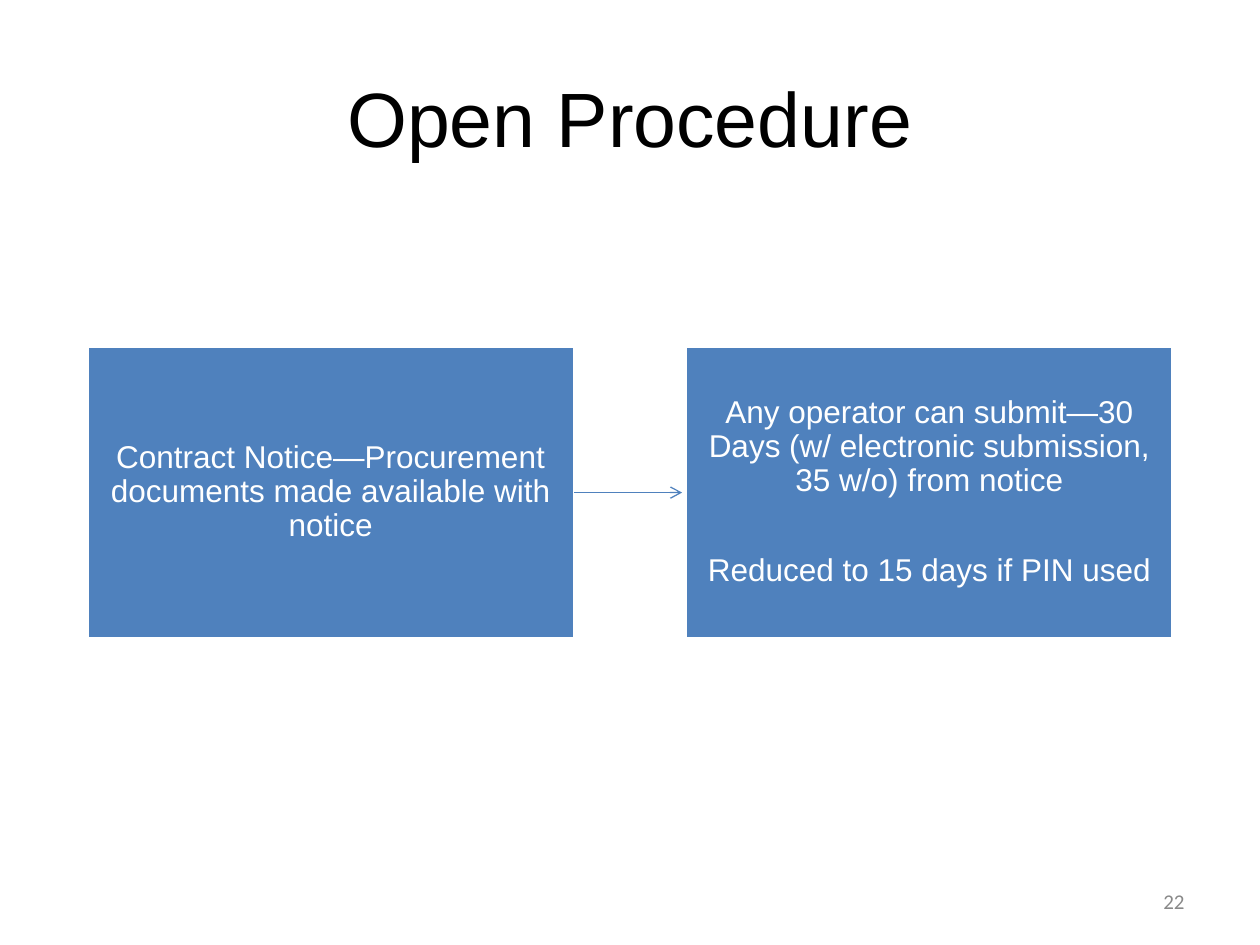
from lxml import etree
from pptx import Presentation
from pptx.dml.color import RGBColor
from pptx.enum.shapes import MSO_CONNECTOR, MSO_SHAPE
from pptx.enum.text import MSO_ANCHOR, PP_ALIGN
from pptx.oxml.ns import qn
from pptx.util import Cm, Pt

RECTANGLE, STRAIGHT = MSO_SHAPE.RECTANGLE, MSO_CONNECTOR.STRAIGHT
MIDDLE, CENTER, RIGHT = MSO_ANCHOR.MIDDLE, PP_ALIGN.CENTER, PP_ALIGN.RIGHT

# Content
TITLE = "Open Procedure"
STEPS = [
    ["Contract Notice—Procurement documents made available with notice"],
    ["Any operator can submit—30 Days (w/ electronic submission, 35 w/o) from notice",
     "Reduced to 15 days if PIN used"],
]
PAGE_NUMBER = "22"

# Format
COLORS = {"black": "000000", "white": "FFFFFF", "blue": "4F81BD", "gray": "898989"}
TITLE_FONT = {"name": "Arial", "size": Pt(44), "color": "black"}
STEP_FONT = {"name": "Arial", "size": Pt(18), "color": "white"}
NUMBER_FONT = {"name": "Calibri", "size": Pt(12), "color": "gray"}
STEP_SPACING = {"line_spacing": 0.9}
PARAGRAPH_GAP = Pt(32)

# Layout in centimetres
SLIDE_WIDTH, SLIDE_HEIGHT = 25.4, 19.05
STEP_WIDTH, STEP_HEIGHT, STEP_TOP, STEP_GAP = 9.83, 5.9, 6.98, 2.24
STEP_MARGIN = 0.36
ARROW_INSET = 0.07
ROW_WIDTH = len(STEPS) * STEP_WIDTH + (len(STEPS) - 1) * STEP_GAP
ROW_LEFT = (SLIDE_WIDTH - ROW_WIDTH) / 2


def color(name):
    return RGBColor.from_string(COLORS[name])


def write(shape, lines, font, alignment, spacing=None, margin=None):
    frame = shape.text_frame
    frame.word_wrap = True
    frame.vertical_anchor = MIDDLE
    if margin is not None:
        for side in ("left", "right", "top", "bottom"):
            setattr(frame, f"margin_{side}", Cm(margin))
    for index, line in enumerate(lines):
        paragraph = frame.add_paragraph() if index else frame.paragraphs[0]
        paragraph.alignment = alignment
        for name, value in (spacing or {}).items():
            setattr(paragraph, name, value)
        if index:
            paragraph.space_before = PARAGRAPH_GAP
        run = paragraph.add_run()
        run.text = line
        for name, value in font.items():
            if name == "color":
                run.font.color.rgb = color(value)
            else:
                setattr(run.font, name, value)


def add_text(slide, box, text, font, alignment):
    shape = slide.shapes.add_textbox(*map(Cm, box))
    write(shape, [text], font, alignment)


def add_step(slide, left, lines):
    shape = slide.shapes.add_shape(
        RECTANGLE, Cm(left), Cm(STEP_TOP), Cm(STEP_WIDTH), Cm(STEP_HEIGHT))
    shape.shadow.inherit = False
    shape.fill.solid()
    shape.fill.fore_color.rgb = color("blue")
    shape.line.color.rgb = color("white")
    shape.line.width = Pt(2)
    write(shape, lines, STEP_FONT, CENTER, STEP_SPACING, STEP_MARGIN)


def add_arrow(slide, start, end):
    middle = Cm(STEP_TOP + STEP_HEIGHT / 2)
    arrow = slide.shapes.add_connector(STRAIGHT, Cm(start), middle, Cm(end), middle)
    arrow.line.color.rgb = color("blue")
    arrow.line.width = Pt(0.75)
    etree.SubElement(arrow.line._get_or_add_ln(), qn("a:tailEnd"), type="arrow")
    etree.SubElement(arrow._element.spPr, qn("a:effectLst"))


def main():
    presentation = Presentation()
    presentation.slide_width = Cm(SLIDE_WIDTH)
    presentation.slide_height = Cm(SLIDE_HEIGHT)
    slide = presentation.slides.add_slide(presentation.slide_layouts[6])

    # Title
    add_text(slide, (1.27, 0.76, 22.86, 3.18), TITLE, TITLE_FONT, CENTER)

    # Steps, with an arrow in each gap
    for index, lines in enumerate(STEPS):
        left = ROW_LEFT + index * (STEP_WIDTH + STEP_GAP)
        if index:
            add_arrow(slide, left - STEP_GAP, left - ARROW_INSET)
        add_step(slide, left, lines)

    # Page number
    add_text(slide, (18.2, 17.66, 5.93, 1.01), PAGE_NUMBER, NUMBER_FONT, RIGHT)

    presentation.save("out.pptx")


if __name__ == "__main__":
    main()
